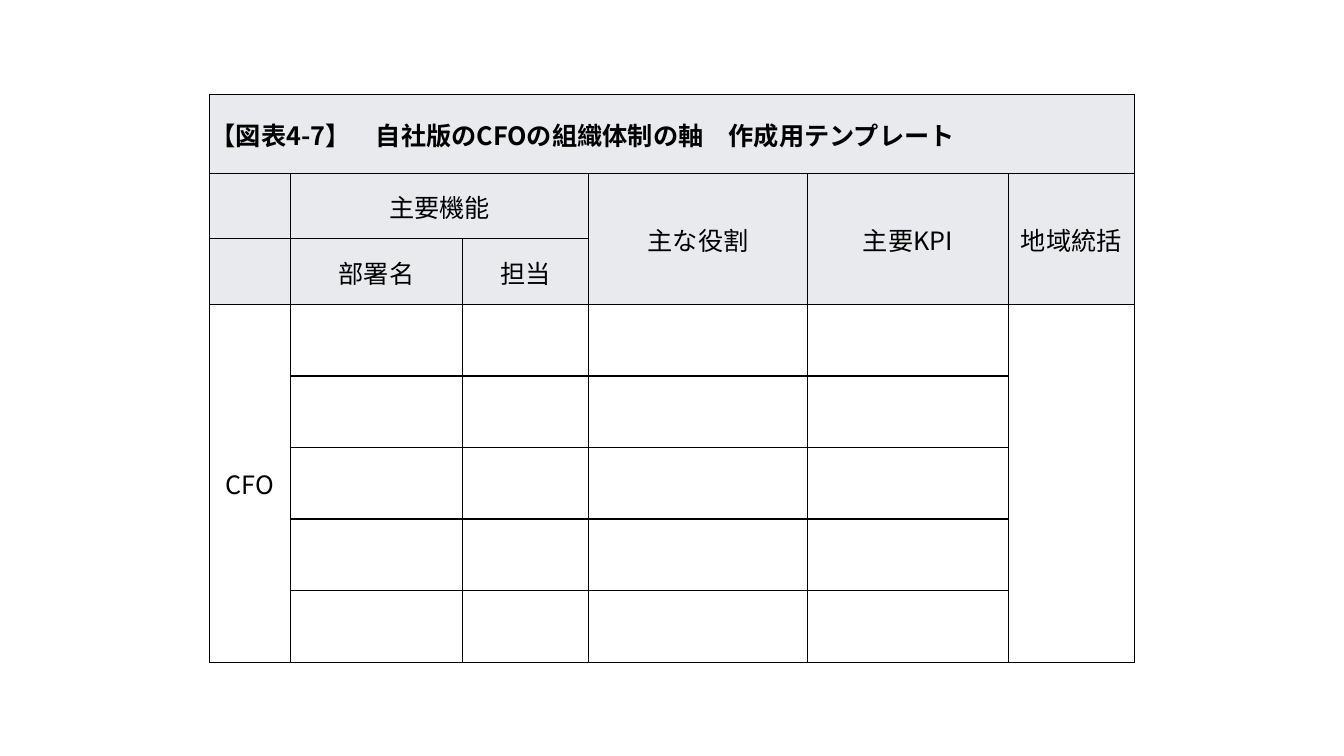
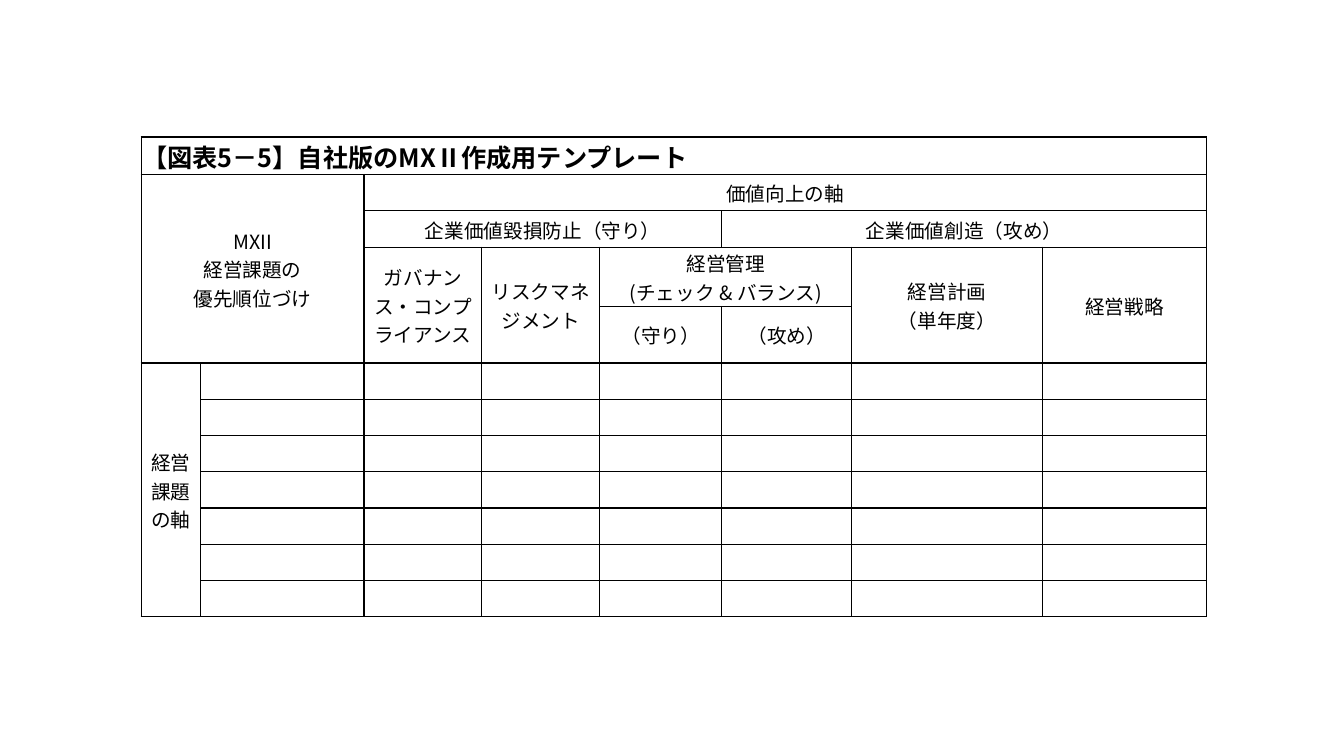
"""Build two blank management templates, each one bordered table on its own slide."""

from dataclasses import dataclass

import lxml.etree
import pptx
import pptx.dml.color
import pptx.enum.text
import pptx.oxml.ns
import pptx.presentation
import pptx.table
import pptx.util

PX = 9144
SLIDE_WIDTH, SLIDE_HEIGHT = 1333, 750
BLANK_LAYOUT = 6
FONT = "Noto Sans CJK JP"
INK = pptx.dml.color.RGBColor(0x00, 0x00, 0x00)
HEADER_GRAY = pptx.dml.color.RGBColor(0xE8, 0xEA, 0xED)
BORDER = pptx.util.Pt(1)
TITLE_SIZE = 18
CELL_INSET = 1


@dataclass(frozen=True)
class Label:
    """Text of a cell and the rows and columns it spans."""

    row: int
    column: int
    text: str = ""
    rows: int = 1
    columns: int = 1


@dataclass(frozen=True)
class Template:
    """A titled table with header rows above empty rows to fill in."""

    title: str
    left: int
    top: int
    columns: tuple[int, ...]
    header_rows: tuple[int, ...]
    entry_rows: tuple[int, ...]
    text_size: int
    labels: tuple[Label, ...]
    shaded_header: bool = False


ORGANIZATION = Template(
    title="【図表4-7】\u3000自社版のCFOの組織体制の軸\u3000作成用テンプレート".replace("\u3000", "　"),
    left=208,
    top=94,
    columns=(80, 171, 125, 217, 199, 125),
    header_rows=(78, 65, 65),
    entry_rows=(71,) * 5,
    text_size=18,
    labels=(
        Label(1, 1, "主要機能", columns=2),
        Label(1, 3, "主な役割", rows=2),
        Label(1, 4, "主要KPI", rows=2),
        Label(1, 5, "地域統括", rows=2),
        Label(2, 1, "部署名"),
        Label(2, 2, "担当"),
        Label(3, 0, "CFO", rows=5),
        Label(3, 5, rows=5),
    ),
    shaded_header=True,
)

PRIORITIES = Template(
    title="【図表5－5】自社版のMXⅡ作成用テンプレート",
    left=140,
    top=136,
    columns=(59, 162, 117, 117, 121, 129, 189, 163),
    header_rows=(37, 36, 36, 59, 56),
    entry_rows=(36,) * 7,
    text_size=14,
    labels=(
        Label(1, 0, "MXII\n経営課題の\n優先順位づけ", rows=4, columns=2),
        Label(1, 2, "価値向上の軸", columns=6),
        Label(2, 2, "企業価値毀損防止（守り）", columns=3),
        Label(2, 5, "企業価値創造（攻め）", columns=3),
        Label(3, 2, "ガバナンス・コンプライアンス", rows=2),
        Label(3, 3, "リスクマネジメント", rows=2),
        Label(3, 4, "経営管理\n(チェック & バランス)", columns=2),
        Label(3, 6, "経営計画\n（単年度）", rows=2),
        Label(3, 7, "経営戦略", rows=2),
        Label(4, 4, "（守り）"),
        Label(4, 5, "（攻め）"),
        Label(5, 0, "経営課題の軸", rows=7),
    ),
)


def px(length: int) -> pptx.util.Emu:
    """Turn a length in px into EMU."""
    return pptx.util.Emu(length * PX)


def add_borders(cell: pptx.table._Cell) -> None:
    """Draw a thin line on all four sides of a cell."""
    properties = cell._tc.get_or_add_tcPr()
    qn = pptx.oxml.ns.qn
    for side in ("a:lnL", "a:lnR", "a:lnT", "a:lnB"):
        line = lxml.etree.SubElement(properties, qn(side), w=str(int(BORDER)))
        ink = lxml.etree.SubElement(line, qn("a:solidFill"))
        lxml.etree.SubElement(ink, qn("a:srgbClr"), val=str(INK))


def style_cell(cell: pptx.table._Cell, size: int, shaded: bool) -> None:
    """Give a cell its borders, fill, insets and centred text."""
    add_borders(cell)
    if shaded:
        cell.fill.solid()
        cell.fill.fore_color.rgb = HEADER_GRAY
    else:
        cell.fill.background()
    cell.margin_left = cell.margin_right = cell.margin_top = px(CELL_INSET)
    cell.margin_bottom = 0
    cell.vertical_anchor = pptx.enum.text.MSO_ANCHOR.MIDDLE
    for paragraph in cell.text_frame.paragraphs:
        paragraph.alignment = pptx.enum.text.PP_ALIGN.CENTER
        paragraph.font.size = pptx.util.Pt(size)
        paragraph.font.bold = False
        paragraph.font.color.rgb = INK
        paragraph.font.name = FONT
        lxml.etree.SubElement(
            paragraph.font._element, pptx.oxml.ns.qn("a:ea"), typeface=FONT
        )


def style_title(cell: pptx.table._Cell) -> None:
    """Set the title row bold and flush left."""
    title = cell.text_frame.paragraphs[0]
    title.alignment = pptx.enum.text.PP_ALIGN.LEFT
    title.font.size = pptx.util.Pt(TITLE_SIZE)
    title.font.bold = True


def add_template(deck: pptx.presentation.Presentation, template: Template) -> None:
    """Add a slide that holds one template table."""
    slide = deck.slides.add_slide(deck.slide_layouts[BLANK_LAYOUT])
    heights = template.header_rows + template.entry_rows
    table = slide.shapes.add_table(
        len(heights),
        len(template.columns),
        px(template.left),
        px(template.top),
        px(sum(template.columns)),
        px(sum(heights)),
    ).table
    table.first_row = table.horz_banding = False
    for column, width in zip(table.columns, template.columns):
        column.width = px(width)
    for row, height in zip(table.rows, heights):
        row.height = px(height)

    title = Label(0, 0, template.title, columns=len(template.columns))
    for label in (title, *template.labels):
        cell = table.cell(label.row, label.column)
        cell.text = label.text
        if label.rows * label.columns > 1:
            cell.merge(
                table.cell(
                    label.row + label.rows - 1, label.column + label.columns - 1
                )
            )

    for index, row in enumerate(table.rows):
        shaded = template.shaded_header and index < len(template.header_rows)
        for cell in row.cells:
            style_cell(cell, template.text_size, shaded)
    style_title(table.cell(0, 0))


def main() -> None:
    """Build the deck and save it."""
    deck = pptx.Presentation()
    deck.slide_width, deck.slide_height = px(SLIDE_WIDTH), px(SLIDE_HEIGHT)
    for template in (ORGANIZATION, PRIORITIES):
        add_template(deck, template)
    deck.save("out.pptx")


if __name__ == "__main__":
    main()
